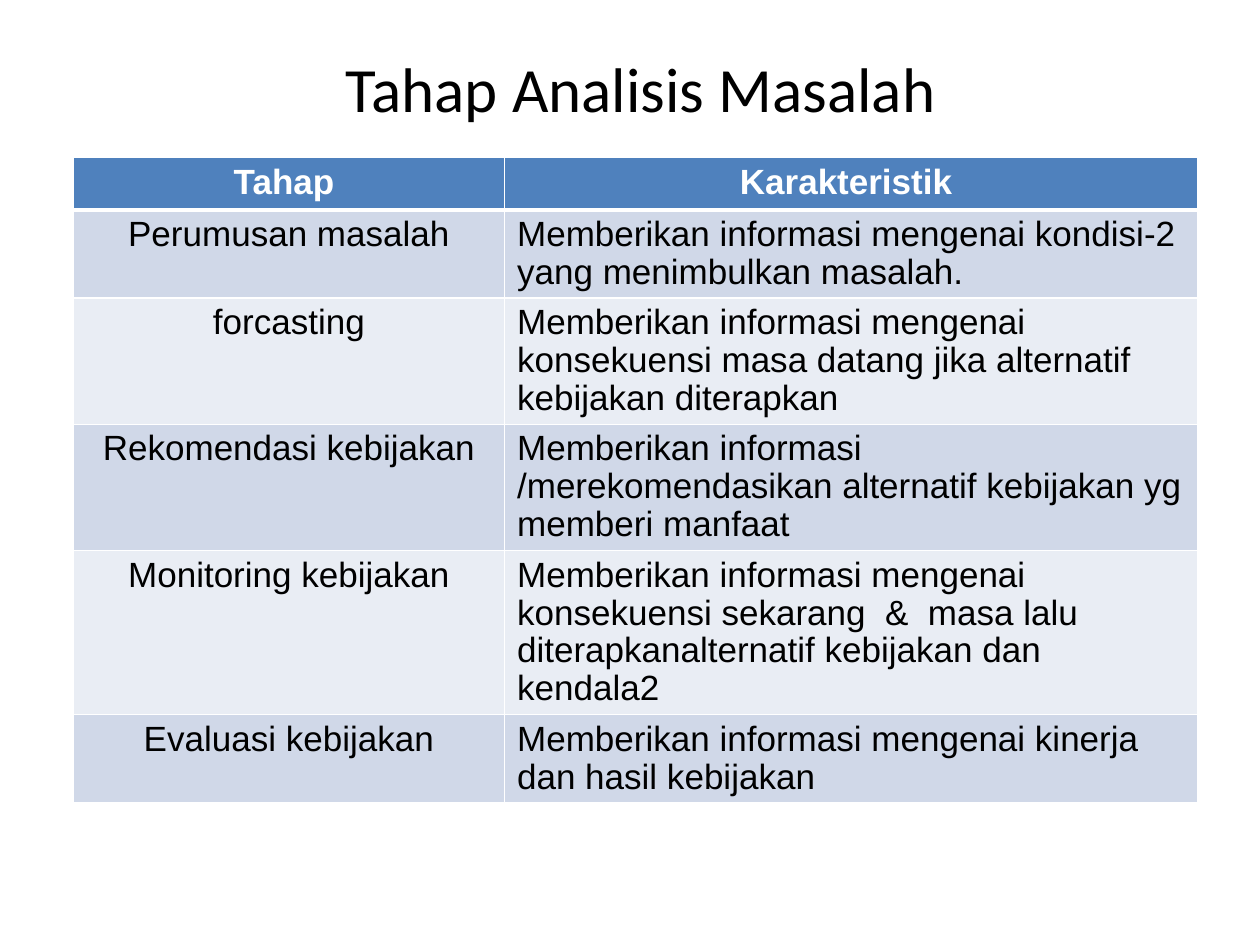
from dataclasses import dataclass

import lxml.etree
import pptx
import pptx.dml.color
import pptx.enum.text
import pptx.oxml.ns
import pptx.table
import pptx.text.text
import pptx.util

Cm = pptx.util.Cm
Pt = pptx.util.Pt
RGBColor = pptx.dml.color.RGBColor
Align = pptx.enum.text.PP_ALIGN

BLACK = RGBColor(0x00, 0x00, 0x00)
WHITE = RGBColor(0xFF, 0xFF, 0xFF)
HEADER_BLUE = RGBColor(0x4F, 0x81, 0xBD)
BAND_DARK = RGBColor(0xD0, 0xD8, 0xE8)
BAND_LIGHT = RGBColor(0xE9, 0xED, 0xF4)

COLUMN_WIDTHS = (Cm(8.69), Cm(13.97))
ROW_HEIGHT = Cm(1.05)
THIN, THICK = Pt(1), Pt(3)


@dataclass(frozen=True)
class Stage:
    name: str
    trait: str


HEADER = Stage("Tahap ", "Karakteristik ")
STAGES = (
    Stage("Perumusan masalah",
          "Memberikan informasi mengenai kondisi-2 yang menimbulkan masalah."),
    Stage("forcasting",
          "Memberikan informasi mengenai konsekuensi masa datang jika "
          "alternatif kebijakan diterapkan"),
    Stage("Rekomendasi kebijakan",
          "Memberikan informasi /merekomendasikan alternatif kebijakan yg "
          "memberi manfaat"),
    Stage("Monitoring kebijakan",
          "Memberikan informasi mengenai konsekuensi sekarang  &  masa lalu "
          "diterapkanalternatif kebijakan dan kendala2"),
    Stage("Evaluasi kebijakan",
          "Memberikan informasi mengenai kinerja dan hasil kebijakan"),
)


@dataclass(frozen=True)
class CellStyle:
    fill: RGBColor
    color: RGBColor
    bold: bool
    top: int
    bottom: int


def write_span(para: pptx.text.text._Paragraph, text: str, font: str,
               size: int, color: RGBColor, bold: bool = False) -> None:
    span = para.add_run()
    span.text = text
    span.font.name = font
    span.font.size = Pt(size)
    span.font.bold = bold
    span.font.color.rgb = color


def draw_borders(cell: pptx.table._Cell, style: CellStyle) -> None:
    qn = pptx.oxml.ns.qn
    properties = cell._tc.get_or_add_tcPr()
    widths = {"a:lnL": THIN, "a:lnR": THIN, "a:lnT": style.top, "a:lnB": style.bottom}
    for tag, width in widths.items():
        line = lxml.etree.SubElement(properties, qn(tag), w=str(int(width)))
        fill = lxml.etree.SubElement(line, qn("a:solidFill"))
        lxml.etree.SubElement(fill, qn("a:srgbClr"), val=str(WHITE))


def fill_cell(cell: pptx.table._Cell, text: str, align: Align, style: CellStyle) -> None:
    draw_borders(cell, style)
    cell.fill.solid()
    cell.fill.fore_color.rgb = style.fill
    para = cell.text_frame.paragraphs[0]
    para.alignment = align
    para.line_spacing = 0.97
    write_span(para, text, "Arial", 20, style.color, style.bold)


def row_style(index: int) -> CellStyle:
    if index == 0:
        return CellStyle(HEADER_BLUE, WHITE, True, THIN, THICK)
    band = BAND_DARK if index % 2 else BAND_LIGHT
    return CellStyle(band, BLACK, False, THICK if index == 1 else THIN, THIN)


def main() -> None:
    deck = pptx.Presentation()
    deck.slide_width, deck.slide_height = Cm(25.4), Cm(19.05)
    slide = deck.slides.add_slide(deck.slide_layouts[5])

    title = slide.shapes.title
    title.left, title.top = Cm(1.7), Cm(0.76)
    title.width, title.height = Cm(22.43), Cm(1.98)
    title.text_frame.vertical_anchor = pptx.enum.text.MSO_ANCHOR.MIDDLE
    para = title.text_frame.paragraphs[0]
    para.alignment = Align.CENTER
    write_span(para, "Tahap Analisis Masalah", "Calibri", 36, BLACK)

    rows = (HEADER, *STAGES)
    table = slide.shapes.add_table(
        len(rows), len(COLUMN_WIDTHS), Cm(1.48), Cm(3.18),
        sum(COLUMN_WIDTHS), ROW_HEIGHT * len(rows)).table
    for column, width in zip(table.columns, COLUMN_WIDTHS):
        column.width = width
    for index, stage in enumerate(rows):
        style = row_style(index)
        trait_align = Align.LEFT if index else Align.CENTER
        fill_cell(table.cell(index, 0), stage.name, Align.CENTER, style)
        fill_cell(table.cell(index, 1), stage.trait, trait_align, style)

    deck.save("out.pptx")


if __name__ == "__main__":
    main()
